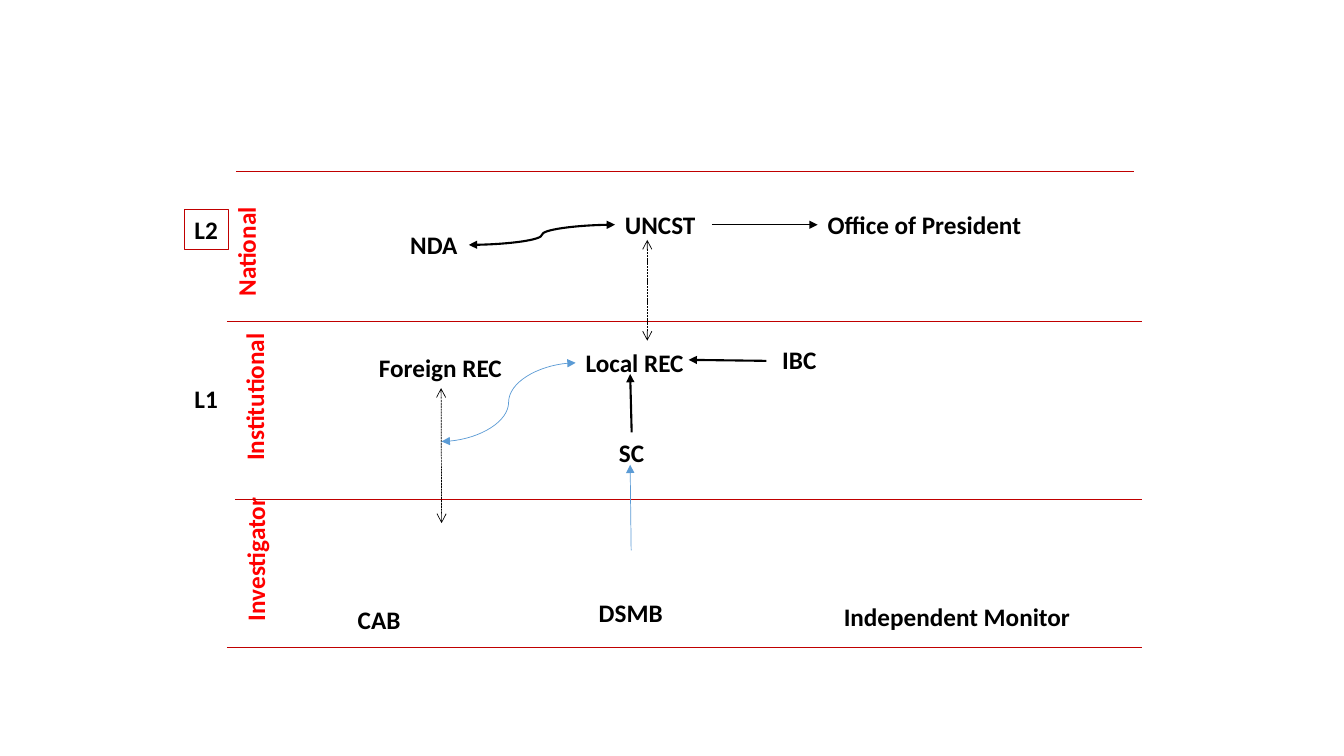
from lxml import etree
from pptx import Presentation
from pptx import util as u
from pptx.dml.color import RGBColor
from pptx.enum import dml, shapes, text
from pptx.oxml import ns

BLACK = RGBColor(0x00, 0x00, 0x00)
RED = RGBColor(0xFF, 0x00, 0x00)
DARK_RED = RGBColor(0xC0, 0x00, 0x00)
BLUE = RGBColor(0x5B, 0x9B, 0xD5)
STRAIGHT = shapes.MSO_CONNECTOR.STRAIGHT
CURVE = shapes.MSO_CONNECTOR.CURVE
LABEL_HEIGHT = 0.4
TOP, LEFT, BOTTOM, RIGHT = range(4)

presentation = Presentation()
presentation.slide_width = u.Inches(13.33)
presentation.slide_height = u.Inches(7.5)
slide = presentation.slides.add_slide(presentation.slide_layouts[6])


def add_label(wording, left, top, width, color=BLACK, wrap=False):
    box = slide.shapes.add_textbox(*map(u.Inches, (left, top, width, LABEL_HEIGHT)))
    frame = box.text_frame
    frame.text = wording
    frame.word_wrap = wrap
    frame.auto_size = text.MSO_AUTO_SIZE.SHAPE_TO_FIT_TEXT
    font = frame.paragraphs[0].runs[0].font
    font.name, font.size, font.bold = "Calibri", u.Pt(18), True
    font.color.rgb = color
    return box


def add_line(start, end, color, weight=0.5, kind=STRAIGHT, head=None, tail=None):
    """Join two ends, each an (x, y) point in inches or a (label, side) pair."""
    ends = [(0, 0) if hasattr(place[0], "shape_id") else place for place in (start, end)]
    line = slide.shapes.add_connector(kind, *(u.Inches(n) for point in ends for n in point))
    if hasattr(start[0], "shape_id"):
        line.begin_connect(*start)
    if hasattr(end[0], "shape_id"):
        line.end_connect(*end)
    line.line.color.rgb = color
    line.line.width = u.Pt(weight)
    if head == "arrow":
        line.line.dash_style = dml.MSO_LINE.SQUARE_DOT
    outline = line.line._get_or_add_ln()
    for tag, arrowhead in (("a:headEnd", head), ("a:tailEnd", tail)):
        if arrowhead:
            etree.SubElement(outline, ns.qn(tag)).set("type", arrowhead)
    etree.SubElement(line._element.spPr, ns.qn("a:effectLst"))


# Bodies at each level: wording, left, top, width, wrap
bodies = {}
for wording, left, top, width, wrap in (
    ("UNCST", 6.1, 2.03, 0.96, False),
    ("NDA", 3.97, 2.23, 0.68, False),
    ("Office of President", 8.11, 2.03, 2.15, False),
    ("Foreign REC", 3.66, 3.45, 1.43, False),
    ("Local REC", 5.71, 3.4, 1.29, True),
    ("IBC", 7.66, 3.37, 0.54, False),
    ("CAB", 3.45, 5.95, 1.23, True),
    ("SC", 6.04, 4.29, 0.45, False),
    ("DSMB", 5.84, 5.88, 0.86, True),
    ("Independent Monitor", 8.27, 5.92, 2.98, True),
):
    bodies[wording] = add_label(wording, left, top, width, wrap=wrap)

# Level names, turned to read upwards
for wording, left, top, width in (
    ("National", 1.89, 2.29, 1.1),
    ("Institutional", 1.78, 3.73, 1.48),
    ("Investigator", 1.81, 5.34, 1.44),
):
    add_label(wording, left, top, width, RED).rotation = 270

add_label("L1", 1.83, 3.75, 0.44)
level_two = add_label("L2", 1.83, 2.08, 0.44)
level_two.line.color.rgb = DARK_RED
level_two.line.width = u.Pt(0.75)

# Level dividers
for left, right, y in ((2.34, 11.25, 1.7), (2.25, 11.33, 3.19),
                       (2.33, 11.33, 4.95), (2.25, 11.33, 6.42)):
    add_line((left, y), (right, y), DARK_RED)

# Dashed links across levels
add_line((6.42, 2.38), (6.42, 3.38), BLACK, head="arrow", tail="arrow")
add_line((bodies["Foreign REC"], BOTTOM), (4.38, 5.19), BLACK, head="arrow", tail="arrow")

# Reporting arrows
add_line((7.6, 3.58), (6.83, 3.57), BLACK, 1.5, tail="triangle")
add_line((bodies["NDA"], RIGHT), (bodies["UNCST"], LEFT), BLACK, 1.5, CURVE,
         head="triangle", tail="triangle")
add_line((bodies["UNCST"], RIGHT), (bodies["Office of President"], LEFT), BLACK,
         tail="triangle")
add_line((4.38, 4.38), (bodies["Local REC"], LEFT), BLUE, kind=CURVE,
         head="triangle", tail="triangle")
add_line((6.26, 5.46), (6.25, 4.61), BLUE, tail="triangle")
add_line((bodies["SC"], TOP), (6.25, 3.71), BLACK, 1.5, tail="triangle")

presentation.save("out.pptx")
